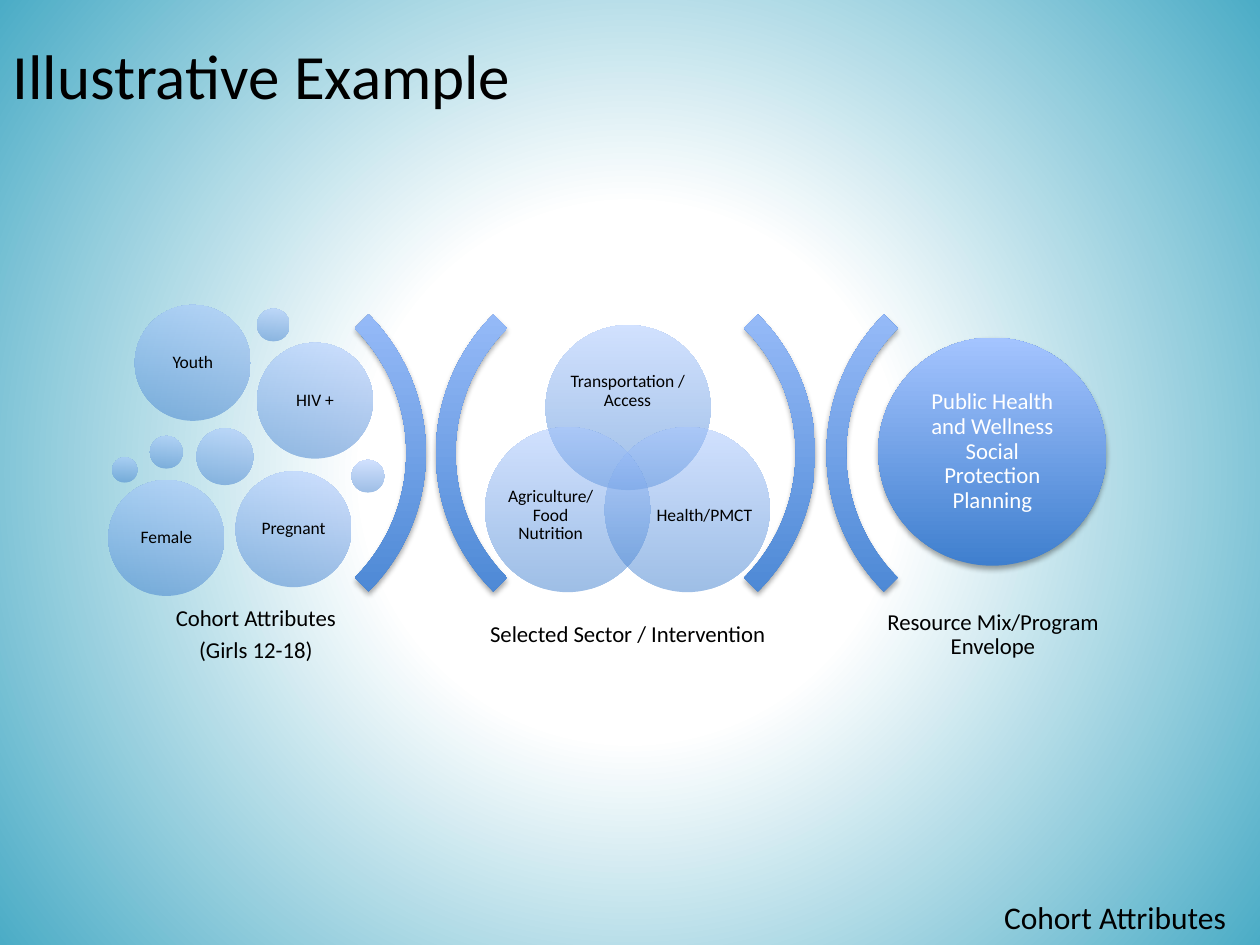
from dataclasses import dataclass
from typing import Optional

import pptx
import pptx.dml.color
import pptx.enum.shapes
import pptx.enum.text
import pptx.oxml
import pptx.oxml.ns
import pptx.util

SHAPE = pptx.enum.shapes.MSO_SHAPE
ALIGN = pptx.enum.text.PP_ALIGN
ANCHOR = pptx.enum.text.MSO_ANCHOR
FIT = pptx.enum.text.MSO_AUTO_SIZE
NS = pptx.oxml.ns.nsdecls("a")
COLS, ROWS = 100, 75


@dataclass(frozen=True)
class Theme:
    font: str = "Calibri"
    ink: str = "000000"
    paper: str = "FFFFFF"
    edge: str = "4BACC6"
    deep: str = "3F7FCE"
    light: str = "A4C4FF"
    title: int = 36
    footer: int = 18
    caption: int = 13
    label: int = 10


@dataclass(frozen=True)
class Box:
    col: float
    row: float
    cols: float
    rows: float


@dataclass(frozen=True)
class Circle:
    col: float
    row: float
    size: float
    text: str = ""


@dataclass(frozen=True)
class Label:
    box: Box
    lines: tuple[str, ...]
    size: int
    inset: float = 0.05


T = Theme()
ARC_ROW, ARC_SIZE = 20.4, 31.1
ARCS = ((2.7, 90), (34.6, 270), (33.6, 90), (65.6, 270))
BIG, SMALL = 9.2, 2.6
ATTRIBUTES = (
    Circle(10.7, 24.2, BIG, "Youth"),
    Circle(11.9, 34.6, SMALL),
    Circle(20.4, 24.5, SMALL),
    Circle(20.4, 27.2, BIG, "HIV +"),
    Circle(27.9, 36.5, SMALL),
    Circle(8.6, 38.1, BIG, "Female"),
    Circle(18.7, 37.4, BIG, "Pregnant"),
    Circle(15.6, 34, 4.5),
    Circle(8.9, 36.3, 2),
)
VENN = (Circle(43.3, 25.8, 13.1), Circle(48, 33.9, 13.1), Circle(38.5, 33.9, 13.1))
HUB = Circle(69.7, 26.8, 18.1, "Public Health and Wellness Social Protection Planning")
VENN_LABELS = (
    Label(Box(45, 28.1, 9.6, 5.9), ("Transportation /Access",), T.label, 0),
    Label(Box(52, 37.3, 7.8, 7.2), ("Health/PMCT",), T.label, 0),
    Label(Box(39.8, 37.3, 7.8, 7.2), ("Agriculture/Food Nutrition",), T.label, 0),
)
CAPTIONS = tuple(
    Label(Box(col, 47.3, 23.6, 6.2), lines, T.caption)
    for col, lines in (
        (8.5, ("Cohort Attributes", "(Girls 12-18)")),
        (38, ("Selected Sector / Intervention",)),
        (67, ("Resource Mix/Program Envelope",)),
    )
)

prs = pptx.Presentation()
prs.slide_width = pptx.util.Inches(10)
prs.slide_height = pptx.util.Inches(7.5)


def place(box: Box) -> tuple[int, int, int, int]:
    w, h = prs.slide_width / COLS, prs.slide_height / ROWS
    return round(box.col * w), round(box.row * h), round(box.cols * w), round(box.rows * h)


def gradient(stops: tuple, shade: str, alpha: int = 100):
    gs = "".join(
        f'<a:gs pos="{pos * 1000}"><a:srgbClr val="{color}">'
        f'<a:alpha val="{alpha * 1000}"/></a:srgbClr></a:gs>'
        for pos, color in stops
    )
    return pptx.oxml.parse_xml(
        f'<a:gradFill {NS} rotWithShape="0"><a:gsLst>{gs}</a:gsLst>{shade}</a:gradFill>'
    )


def paint_background(s) -> None:
    s.background.fill.solid()
    bg = s._element.find(".//" + pptx.oxml.ns.qn("p:bgPr"))
    stops = ((0, T.paper), (34, T.paper), (100, T.edge))
    shade = '<a:path path="circle"><a:fillToRect l="50000" t="50000" r="50000" b="50000"/></a:path>'
    bg.replace(bg[0], gradient(stops, shade))


def add_shape(s, kind, box: Box, alpha: int = 100, shadow: bool = False):
    sp = s.shapes.add_shape(kind, *place(box))
    sp.line.fill.background()
    sp.shadow.inherit = False
    sp.fill.solid()
    spPr = sp._element.spPr
    fill = spPr.find(pptx.oxml.ns.qn("a:solidFill"))
    stops = ((0, T.deep), (100, T.light))
    spPr.replace(fill, gradient(stops, '<a:lin ang="16200000" scaled="0"/>', alpha))
    if shadow:
        spPr.find(pptx.oxml.ns.qn("a:effectLst")).append(pptx.oxml.parse_xml(
            f'<a:outerShdw {NS} blurRad="40000" dist="23000" dir="5400000" rotWithShape="0">'
            f'<a:srgbClr val="{T.ink}"><a:alpha val="35000"/></a:srgbClr></a:outerShdw>'
        ))
    return sp


def add_run(p, text: str, size: int, color: str) -> None:
    r = p.add_run()
    r.text = text
    r.font.name = T.font
    r.font.size = pptx.util.Pt(size)
    r.font.color.rgb = pptx.dml.color.RGBColor.from_string(color)


def write_centred(tf, lines: tuple[str, ...], size: int, inset: float, color: str = T.ink) -> None:
    tf.word_wrap = True
    tf.vertical_anchor = ANCHOR.MIDDLE
    tf.margin_left = tf.margin_right = tf.margin_top = tf.margin_bottom = pptx.util.Inches(inset)
    for i, line in enumerate(lines):
        p = tf.add_paragraph() if i else tf.paragraphs[0]
        p.alignment = ALIGN.CENTER
        p.line_spacing = 0.9
        p.space_after = pptx.util.Pt(size * 0.35)
        add_run(p, line, size, color)


def add_circle(s, c: Circle, size: int = T.label, inset: float = 0.04,
               color: str = T.ink, alpha: int = 50, shadow: bool = False) -> None:
    sp = add_shape(s, SHAPE.OVAL, Box(c.col, c.row, c.size, c.size), alpha, shadow)
    if c.text:
        write_centred(sp.text_frame, (c.text,), size, inset, color)


def add_arc(s, col: float, rotation: int) -> None:
    sp = add_shape(s, SHAPE.BLOCK_ARC, Box(col, ARC_ROW, ARC_SIZE, ARC_SIZE), shadow=True)
    sp.rotation = rotation
    for i, value in enumerate((135, 189, 0.05)):
        sp.adjustments[i] = value


def add_label(s, label: Label) -> None:
    tf = s.shapes.add_textbox(*place(label.box)).text_frame
    write_centred(tf, label.lines, label.size, label.inset)


def add_line(sp, text: str, size: int, wrap: bool, fit: Optional[FIT] = None) -> None:
    tf = sp.text_frame
    tf.word_wrap = wrap
    tf.auto_size = fit
    tf.vertical_anchor = ANCHOR.TOP
    p = tf.paragraphs[0]
    p.alignment = ALIGN.LEFT
    add_run(p, text, size, T.ink)


def main() -> None:
    s = prs.slides.add_slide(prs.slide_layouts[5])
    paint_background(s)
    title = s.shapes.title
    title.left, title.top, title.width, title.height = place(Box(0, 2.4, 43.5, 7.1))
    add_line(title, "Illustrative Example", T.title, False, FIT.SHAPE_TO_FIT_TEXT)
    for col, rotation in ARCS:
        add_arc(s, col, rotation)
    for circle in VENN + ATTRIBUTES:
        add_circle(s, circle)
    add_circle(s, HUB, T.caption, 0.05, T.paper, 100, True)
    for label in VENN_LABELS + CAPTIONS:
        add_label(s, label)
    footer = s.shapes.add_textbox(*place(Box(78.7, 70.8, 20.2, 4)))
    add_line(footer, "Cohort Attributes", T.footer, True, FIT.SHAPE_TO_FIT_TEXT)
    prs.save("out.pptx")


if __name__ == "__main__":
    main()
